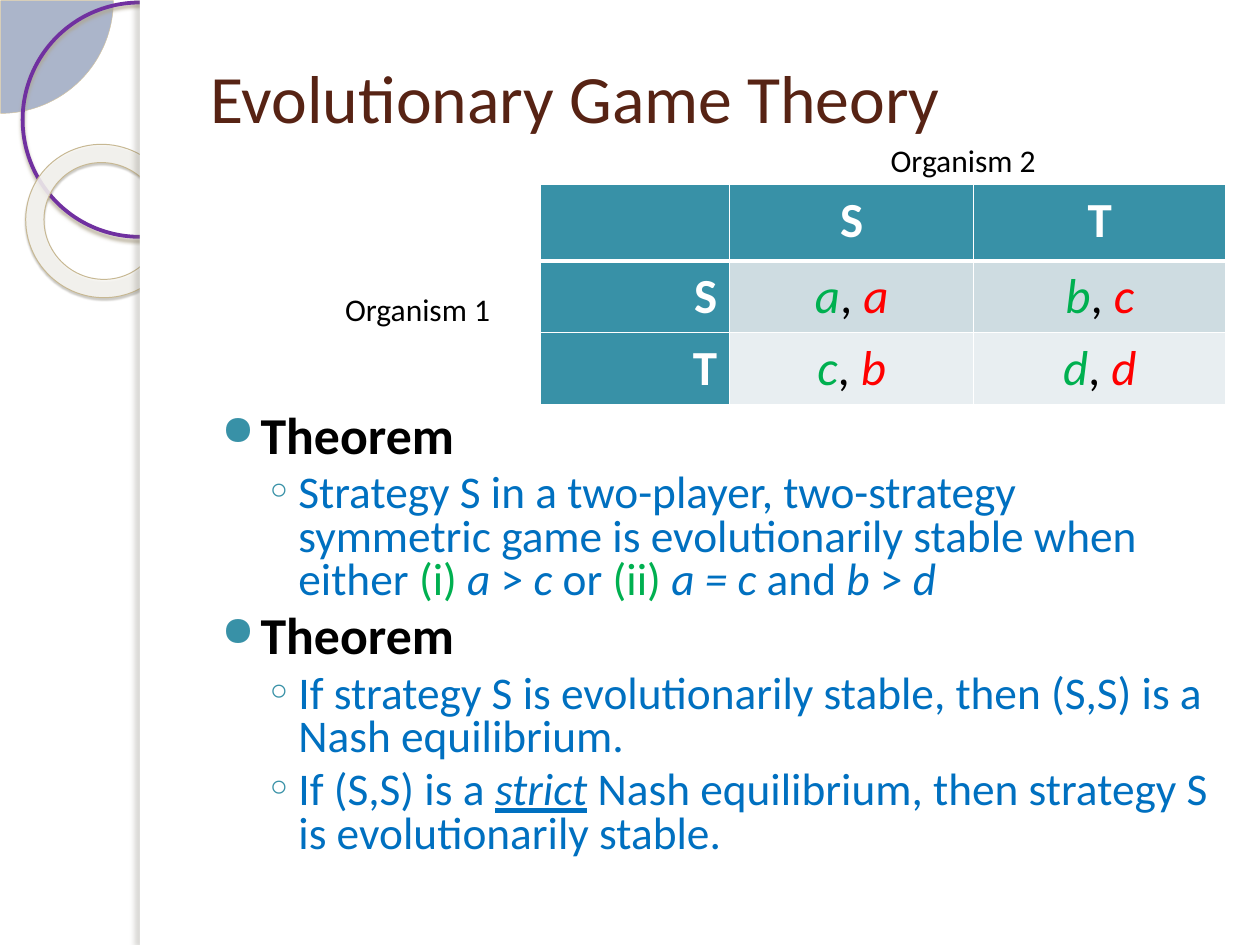
from lxml.etree import SubElement
from pptx import Presentation
from pptx.dml.color import RGBColor
from pptx.enum.shapes import MSO_SHAPE as Shape
from pptx.enum.text import MSO_ANCHOR as Anchor, PP_ALIGN as Align
from pptx.oxml.ns import qn
from pptx.util import Inches, Pt

WIDTH, HEIGHT = Inches(10), Inches(7.5)
FONT = "Calibri"
WHITE, BLACK, TEAL = "FFFFFF", "000000", "3891A7"
BLUE, GREEN, RED = "0070C0", "00B050", "FF0000"


def colour(hex_code):
    return RGBColor.from_string(hex_code)


def area(left, top, width, height):
    """Turn percentages of the slide into a box."""
    return tuple(int(size * share / 100) for size, share in
                 zip((WIDTH, HEIGHT, WIDTH, HEIGHT), (left, top, width, height)))


def element(parent, tag, **attributes):
    return SubElement(parent, qn(tag), {k: str(v) for k, v in attributes.items()})


def colour_element(parent, hex_code, opacity=100):
    node = element(parent, "a:srgbClr", val=hex_code)
    if opacity < 100:
        element(node, "a:alpha", val=opacity * 1000)


def write(paragraph, runs, size):
    """Fill a paragraph from (text, colour, style letters) runs."""
    for text, hex_code, style in runs:
        run = paragraph.add_run()
        run.text = text
        font = run.font
        font.name, font.size = FONT, Pt(size)
        font.color.rgb = colour(hex_code)
        font.bold, font.italic = "b" in style, "i" in style
        font.underline = "u" in style


def decorate(slide, kind, box, fill=None, opacity=100, line=None, shadow=None):
    """Add one ornament; line is (colour, pt), shadow is
    (colour, opacity, blur, distance, angle)."""
    ornament = slide.shapes.add_shape(kind, *box)
    ornament.shadow.inherit = False
    if fill:
        ornament.fill.solid()
        ornament.fill.fore_color.rgb = colour(fill)
        if opacity < 100:
            node = ornament.fill._xPr.find(".//" + qn("a:srgbClr"))
            element(node, "a:alpha", val=opacity * 1000)
    else:
        ornament.fill.background()
    if line:
        ornament.line.color.rgb = colour(line[0])
        ornament.line.width = Pt(line[1])
    else:
        ornament.line.fill.background()
    if shadow:
        tint, strength, blur, distance, angle = shadow
        effects = ornament._element.spPr.find(qn("a:effectLst"))
        outer = element(effects, "a:outerShdw", blurRad=Pt(blur), dist=Pt(distance),
                        dir=angle * 60000, algn="tl", rotWithShape=0)
        colour_element(outer, tint, strength)
    return ornament


def add_side_band(slide, band_width):
    """Circles on the left, cut off by the white content panel."""
    quarter = decorate(slide, Shape.PIE, area(-8.9, -11.87, 17.9, 23.87),
                       "002060", 33, ("D3C39F", 0.25))
    quarter.adjustments[0], quarter.adjustments[1] = 0, 54
    decorate(slide, Shape.OVAL, area(1.8, 0.27, 18.6, 24.8),
             line=("7030A0", 2.15), shadow=("B0A68F", 85, 2, 2, 90))
    ring = decorate(slide, Shape.DONUT, area(2, 15.33, 12.3, 16.13),
                    "F8F7F3", 85, ("C7B893", 0.58), ("5A5444", 35, 1, 1.2, 75))
    ring.adjustments[0] = 0.12
    ring.rotation = 38.6
    decorate(slide, Shape.RECTANGLE, area(band_width, 0, 100 - band_width, 100), WHITE)
    decorate(slide, Shape.RECTANGLE, area(band_width, 0, 0.8, 100), WHITE,
             shadow=("736F63", 25, 3, 3, 180))


def add_title(slide, box, text):
    title = slide.shapes.title
    # bring the title in front of the content panel
    slide.shapes._spTree.append(title._element)
    title.left, title.top, title.width, title.height = box
    frame = title.text_frame
    frame.vertical_anchor = Anchor.MIDDLE
    frame.paragraphs[0].alignment = Align.LEFT
    write(frame.paragraphs[0], [(text, "572314", "")], 38.7)


def add_label(slide, box, text):
    frame = slide.shapes.add_textbox(*box).text_frame
    frame.word_wrap = True
    write(frame.paragraphs[0], [(text, BLACK, "")], 18)


def set_border(cell, side, width):
    line = element(cell._tc.get_or_add_tcPr(), "a:" + side, w=Pt(width))
    colour_element(element(line, "a:solidFill"), WHITE)


def add_payoffs(slide, box, strategies, payoffs):
    """Payoff matrix: strategies head both the rows and the columns."""
    count = len(strategies) + 1
    table = slide.shapes.add_table(count, count, *box).table
    for column, share in zip(table.columns, (27.6, 35.6, 36.8)):
        column.width = int(box[2] * share / 100)
    for row, share in zip(table.rows, (34.8, 32.6, 32.6)):
        row.height = int(box[3] * share / 100)

    for r in range(count):
        for c in range(count):
            cell = table.cell(r, c)
            heading = r == 0 or c == 0
            for side in ("lnL", "lnR", "lnT", "lnB"):
                thick = (r == 0 and side == "lnB") or (r == 1 and side == "lnT")
                set_border(cell, side, 3 if thick else 1)
            cell.fill.solid()
            cell.fill.fore_color.rgb = colour(
                TEAL if heading else ("CEDCE1", "E8EEF1")[r - 1])
            paragraph = cell.text_frame.paragraphs[0]
            paragraph.alignment = Align.RIGHT if c == 0 else Align.CENTER
            if heading and r + c:
                write(paragraph, [(strategies[r + c - 1], WHITE, "b")], 28)
            elif not heading:
                first, second = payoffs[r - 1][c - 1]
                write(paragraph, [(first, GREEN, "i"), (", ", BLACK, ""),
                                  (second, RED, "i")], 28)


def add_theorems(slide, box, items):
    """Two-level bulleted list of (level, runs)."""
    # mark, its font, its size %, text size, space before, left indent, hanging indent
    levels = (("●", "OpenSymbol", 80, 29.6, 6, 0.4, -0.31),
              ("◦", "Verdana", 100, 25.9, 5.5, 0.7, -0.26))
    frame = slide.shapes.add_textbox(*box).text_frame
    frame.word_wrap = True
    for index, (level, runs) in enumerate(items):
        mark, mark_font, mark_size, size, gap, left, hanging = levels[level]
        paragraph = frame.add_paragraph() if index else frame.paragraphs[0]
        paragraph.level = level
        properties = paragraph._p.get_or_add_pPr()
        properties.set("marL", str(Inches(left)))
        properties.set("indent", str(Inches(hanging)))
        colour_element(element(properties, "a:buClr"), TEAL)
        element(properties, "a:buSzPct", val=mark_size * 1000)
        element(properties, "a:buFont", typeface=mark_font)
        element(properties, "a:buChar", char=mark)
        paragraph.line_spacing = 0.8
        paragraph.space_before = Pt(gap if index else 0)
        write(paragraph, runs, size)


def main():
    deck = Presentation()
    deck.slide_width, deck.slide_height = WIDTH, HEIGHT
    slide = deck.slides.add_slide(deck.slide_layouts[5])

    add_side_band(slide, 11.1)
    add_title(slide, area(15.7, 5.07, 82, 10.27), "Evolutionary Game Theory")

    theorem = (0, [("Theorem", BLACK, "b")])
    add_theorems(slide, area(15.7, 43.2, 82, 52.7), [
        theorem,
        (1, [("Strategy S in a two-player, two-strategy symmetric game is "
              "evolutionarily stable when either ", BLUE, ""),
             ("(i) ", GREEN, ""), ("a", BLUE, "i"), (" > ", BLUE, ""),
             ("c", BLUE, "i"), (" or ", BLUE, ""), ("(ii) ", GREEN, ""),
             ("a = c", BLUE, "i"), (" and ", BLUE, ""), ("b", BLUE, "i"),
             (" > ", BLUE, ""), ("d", BLUE, "i")]),
        theorem,
        (1, [("If strategy S is evolutionarily stable, then (S,S) is a "
              "Nash equilibrium.", BLUE, "")]),
        (1, [("If (S,S) is a ", BLUE, ""), ("strict", BLUE, "iu"),
             (" Nash equilibrium, then strategy S is evolutionarily stable.",
              BLUE, "")]),
    ])

    add_payoffs(slide, area(42.9, 19.5, 54.4, 23.3), "ST",
                [[("a", "a"), ("b", "c")], [("c", "b"), ("d", "d")]])
    add_label(slide, area(69.7, 14.27, 18.9, 5.33), "Organism 2")
    add_label(slide, area(26.4, 30, 18.9, 5.33), "Organism 1")

    deck.save("out.pptx")


if __name__ == "__main__":
    main()
